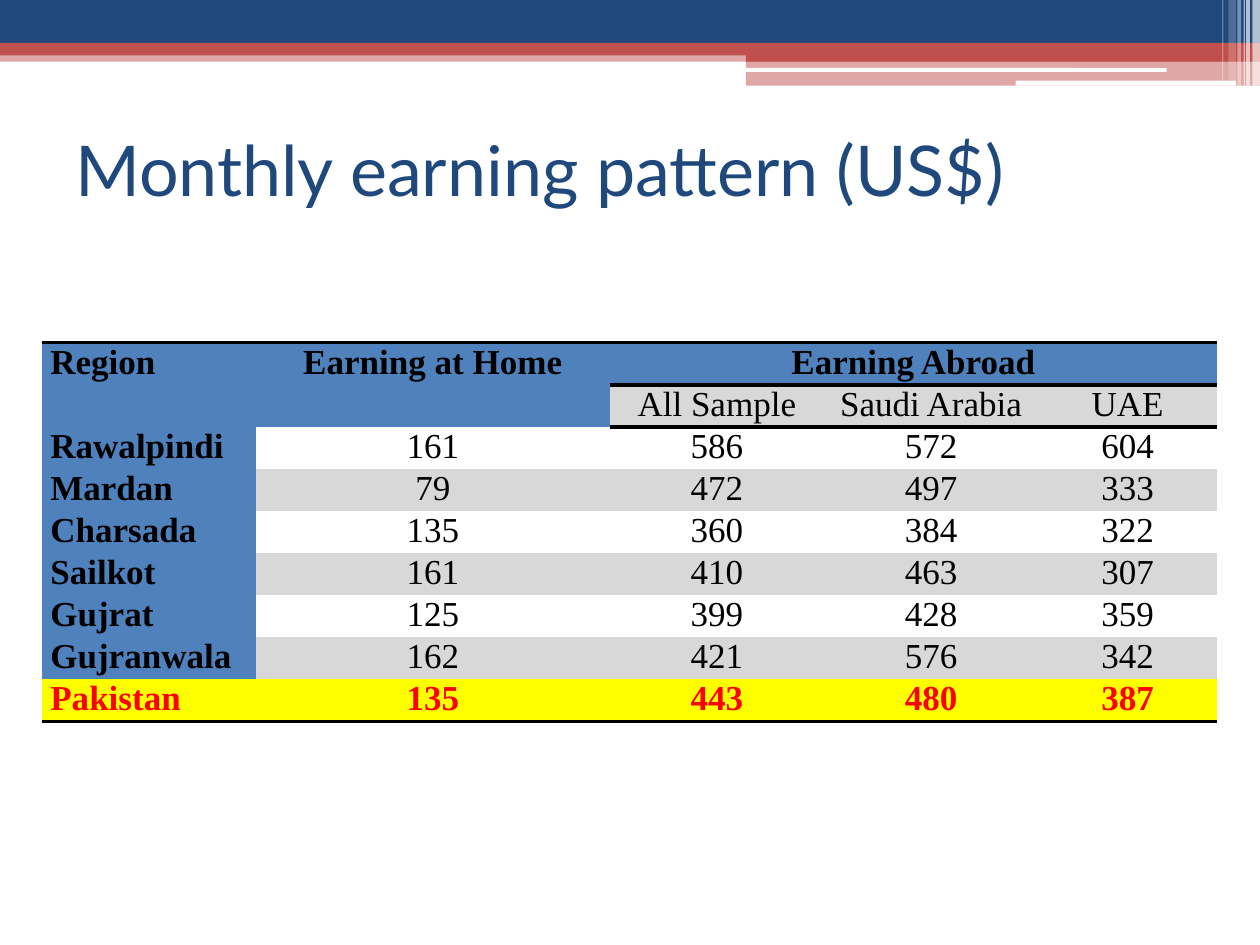
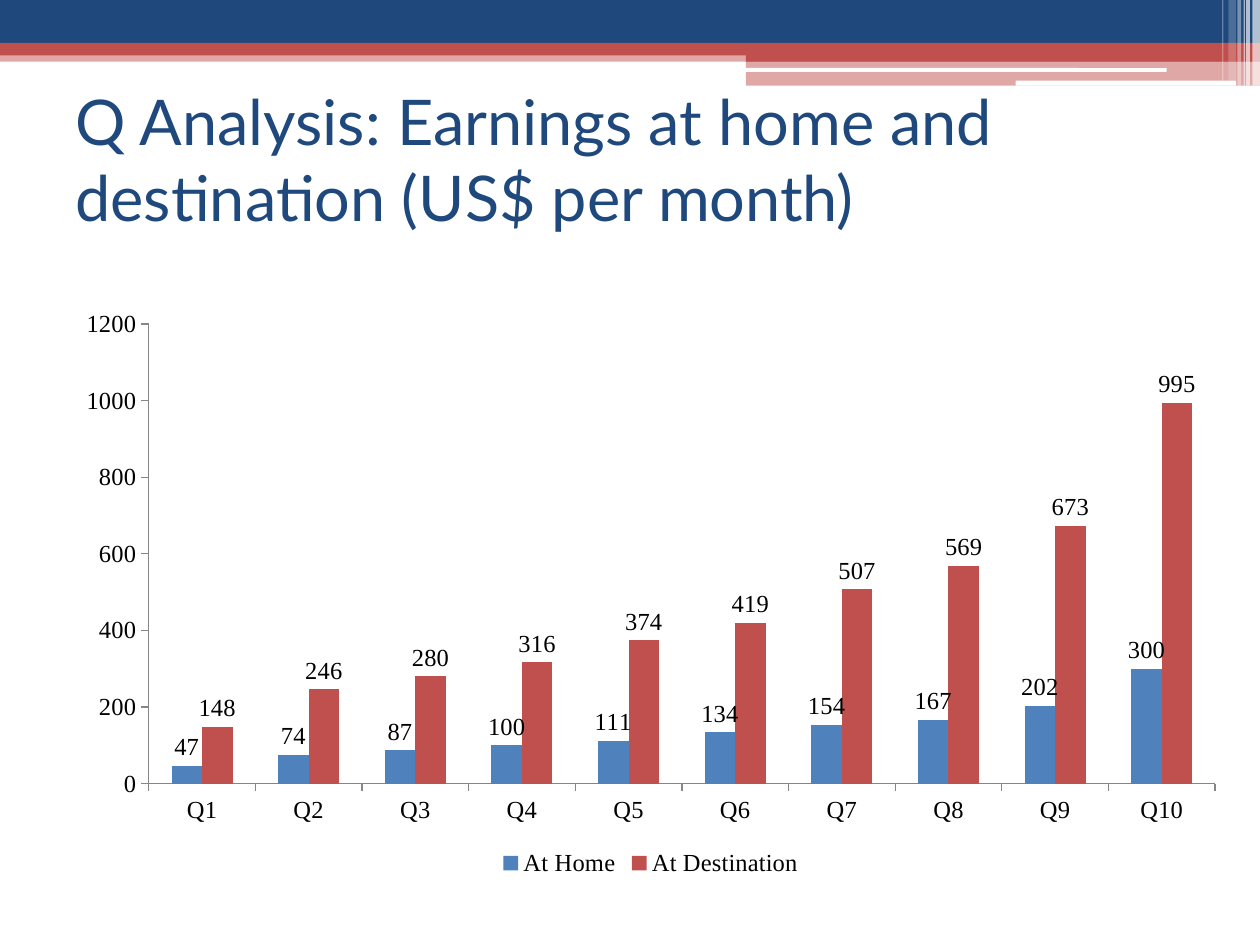
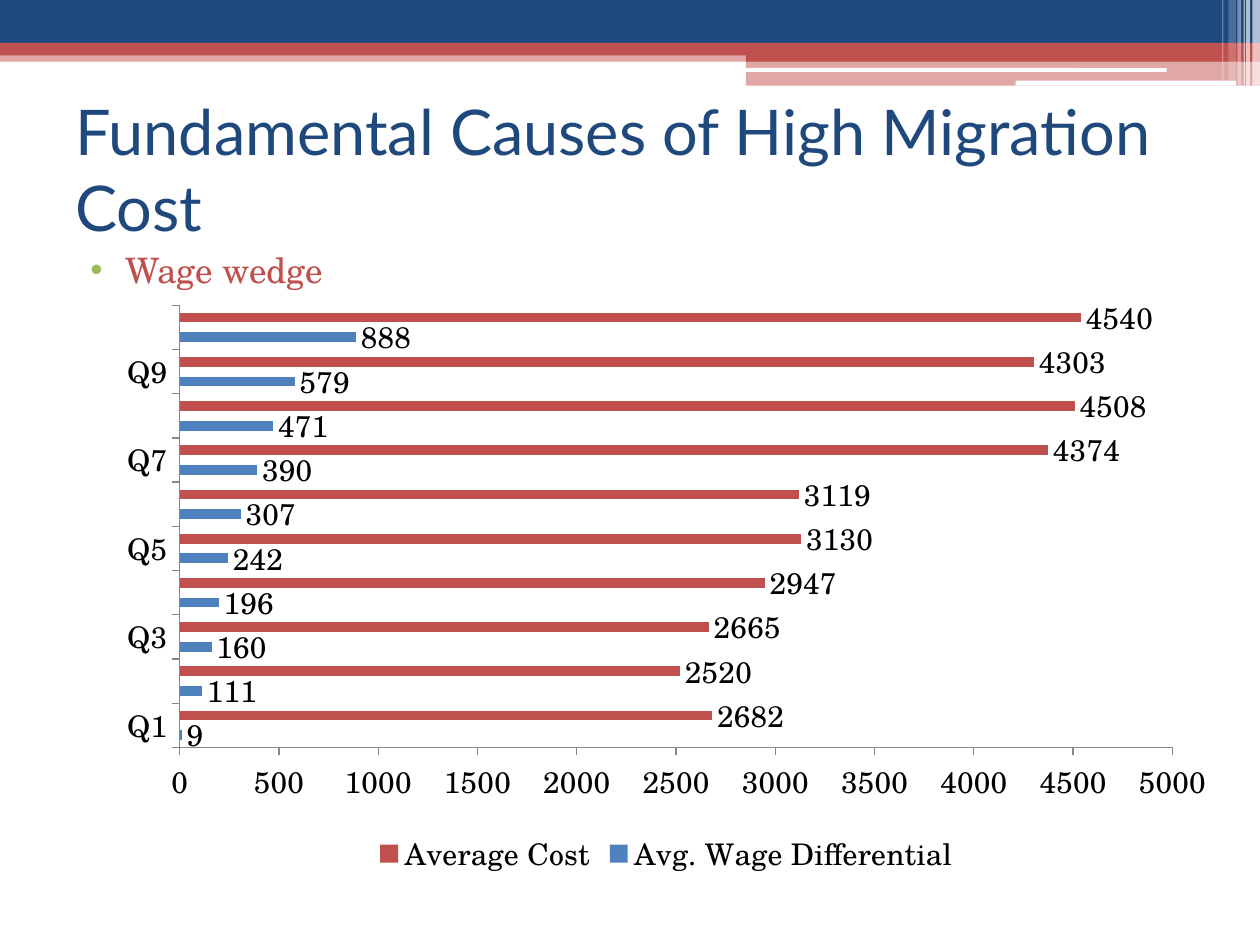
from lxml import etree
from pptx import Presentation
from pptx.chart.data import CategoryChartData
from pptx.dml.color import RGBColor
from pptx.enum.chart import XL_CHART_TYPE as CT, XL_LABEL_POSITION as LP
from pptx.enum.chart import XL_LEGEND_POSITION as LEG, XL_TICK_MARK as TICK
from pptx.enum.shapes import MSO_SHAPE as SHAPE
from pptx.enum.text import MSO_ANCHOR, PP_ALIGN
from pptx.oxml.ns import qn
from pptx.util import Inches, Pt

NAVY = RGBColor(0x1F, 0x49, 0x7D)
RED = RGBColor(0xC0, 0x50, 0x4D)
BLUE = RGBColor(0x4F, 0x81, 0xBD)
GRAY = RGBColor(0xD8, 0xD8, 0xD8)
AXIS_GRAY = RGBColor(0x86, 0x86, 0x86)
YELLOW = RGBColor(0xFF, 0xFF, 0x00)
BRIGHT_RED = RGBColor(0xFF, 0x00, 0x00)
WHITE = RGBColor(0xFF, 0xFF, 0xFF)
BLACK = RGBColor(0x00, 0x00, 0x00)
GREEN = RGBColor(0x9B, 0xBB, 0x59)

TITLE_FONT = "Lato"
BODY_FONT = "TeX Gyre Schola"
DATA_FONT = "Times New Roman"
NO_GRID_STYLE = "{2D5ABB26-0587-4C30-8999-92F81FD0307C}"

BANDS = [
    (0, 0.4, 10, 0.09, RED, 50),
    (0, 0, 10, 0.34, NAVY, 100),
    (0, 0.34, 10, 0.1, RED, 100),
    (5.92, 0.39, 4.08, 0.1, RED, 100),
    (5.92, 0.48, 4.08, 0.2, RED, 50),
]
SLITS = [(5.91, 0.54, 3.35, 0.03), (8.06, 0.64, 1.75, 0.04)]
STRIPES = [
    (9.94, 0.06, 0.68, 65), (9.89, 0.03, 0.68, 65), (9.87, 0.01, 0.68, 60),
    (9.82, 0.03, 0.68, 40), (9.75, 0.06, 0.64, 20), (9.7, 0.01, 0.64, 30),
]

QUINTILES = [f"Q{n}" for n in range(1, 11)]
EARNINGS = [
    ("At Home", BLUE, (47, 74, 87, 100, 111, 134, 154, 167, 202, 300)),
    ("At Destination", RED, (148, 246, 280, 316, 374, 419, 507, 569, 673, 995)),
]
WAGE_WEDGE = [
    ("Avg. Wage Differential", BLUE, (9, 111, 160, 196, 242, 307, 390, 471, 579, 888)),
    ("Average Cost", RED,
     (2682, 2520, 2665, 2947, 3130, 3119, 4374, 4508, 4303, 4540)),
]
COLUMN_WIDTHS = [1.7, 2.81, 1.7, 1.7, 1.42]
EARNING_ROWS = [
    ("Region", "Earning at Home", "Earning Abroad", "", ""),
    ("", "", "All Sample", "Saudi Arabia", "UAE"),
    ("Rawalpindi", "161", "586", "572", "604"),
    ("Mardan", "79", "472", "497", "333"),
    ("Charsada", "135", "360", "384", "322"),
    ("Sailkot", "161", "410", "463", "307"),
    ("Gujrat", "125", "399", "428", "359"),
    ("Gujranwala", "162", "421", "576", "342"),
    ("Pakistan", "135", "443", "480", "387"),
]


def inches(box):
    """Turn a box of plain numbers into lengths."""
    return [Inches(v) for v in box]


def add_run(p, text, font, size, color, bold=False):
    """Add one formatted run to a paragraph."""
    r = p.add_run()
    r.text = text
    r.font.name = font
    r.font.size = Pt(size)
    r.font.bold = bold
    r.font.color.rgb = color


def add_block(s, box, color, alpha=100, kind=SHAPE.RECTANGLE):
    """Draw a borderless block with the given opacity in percent."""
    sp = s.shapes.add_shape(kind, *inches(box))
    sp.shadow.inherit = False
    sp.fill.solid()
    sp.fill.fore_color.rgb = color
    sp.line.fill.background()
    if alpha < 100:
        clr = sp._element.spPr.find(f"{qn('a:solidFill')}/{qn('a:srgbClr')}")
        etree.SubElement(clr, qn("a:alpha"), val=str(alpha * 1000))


def add_header(s, left=0, top=0):
    """Draw the coloured bands, white slits and corner stripes."""
    for x, y, w, h, color, alpha in BANDS:
        add_block(s, (left + x, top + y, w, h), color, alpha)
    for x, y, w, h in SLITS:
        add_block(s, (left + x, top + y, w, h), WHITE, kind=SHAPE.ROUNDED_RECTANGLE)
    for x, w, h, alpha in STRIPES:
        add_block(s, (left + x, top, w, h), WHITE, alpha)


def add_text_box(s, box, anchor):
    """Add a wrapping text box and return its frame."""
    tf = s.shapes.add_textbox(*inches(box)).text_frame
    tf.word_wrap = True
    tf.vertical_anchor = anchor
    return tf


def add_titled_slide(prs, title, size=36, top=0.75):
    """Add a slide with the shared header and a title."""
    s = prs.slides.add_slide(prs.slide_layouts[6])
    add_header(s)
    tf = add_text_box(s, (0.5, top, 9, 1.17), MSO_ANCHOR.MIDDLE)
    add_run(tf.paragraphs[0], title, TITLE_FONT, size, NAVY)
    return s


def add_bullet(s, box, text):
    """Add a text box holding one bulleted line."""
    p = add_text_box(s, box, MSO_ANCHOR.TOP).paragraphs[0]
    p.space_before = Pt(3)
    add_run(p, text, BODY_FONT, 20, RED)
    pPr = p._p.get_or_add_pPr()
    pPr.set("marL", str(Inches(0.4)))
    pPr.set("indent", str(Inches(-0.28)))
    clr = etree.SubElement(pPr, qn("a:buClr"))
    etree.SubElement(clr, qn("a:srgbClr"), val=str(GREEN))
    etree.SubElement(pPr, qn("a:buFont"), typeface="Arial")
    etree.SubElement(pPr, qn("a:buChar"), char="•")


def add_border(cell, side):
    """Put a black rule on one side of a cell."""
    ln = etree.Element(qn(f"a:ln{side}"), w=str(Pt(2.25)))
    fill = etree.SubElement(ln, qn("a:solidFill"))
    etree.SubElement(fill, qn("a:srgbClr"), val=str(BLACK))
    cell._tc.get_or_add_tcPr().insert(0, ln)


def cell_fill(row, col, last):
    """Give the fill colour of a table cell, or None."""
    if row == last:
        return YELLOW
    if row == 0 or col == 0 or (row == 1 and col == 1):
        return BLUE
    return GRAY if row % 2 else None


def add_earnings_table(s, left, top, row_height):
    """Add the table of monthly earnings by region."""
    last = len(EARNING_ROWS) - 1
    box = (left, top, sum(COLUMN_WIDTHS), row_height * (last + 1))
    frame = s.shapes.add_table(last + 1, len(COLUMN_WIDTHS), *inches(box))
    next(frame._element.iter(qn("a:tableStyleId"))).text = NO_GRID_STYLE
    table = frame.table
    table.first_row = table.horz_banding = False
    for column, width in zip(table.columns, COLUMN_WIDTHS):
        column.width = Inches(width)
    for i, row in enumerate(EARNING_ROWS):
        for j, text in enumerate(row):
            cell = table.cell(i, j)
            cell.margin_left = cell.margin_right = Inches(0.07)
            cell.margin_top = cell.margin_bottom = 0
            color = cell_fill(i, j, last)
            if color is None:
                cell.fill.background()
            else:
                cell.fill.solid()
                cell.fill.fore_color.rgb = color
            if i == last or (i == 0 and j >= 2):
                add_border(cell, "B")
            if i == 0 or (i == 1 and j >= 2):
                add_border(cell, "T")
            if text:
                p = cell.text_frame.paragraphs[0]
                p.alignment = PP_ALIGN.CENTER if j else PP_ALIGN.LEFT
                add_run(p, text, DATA_FONT, 20, BRIGHT_RED if i == last else BLACK,
                        i in (0, last) or j == 0)
    for start, end in [((0, 0), (1, 0)), ((0, 1), (1, 1)), ((0, 2), (0, 4))]:
        table.cell(*start).merge(table.cell(*end))


def add_bar_chart(s, box, kind, series, font, size, top_value, step, overlap=0):
    """Add a clustered chart with value labels and a legend below."""
    data = CategoryChartData(number_format="0")
    data.categories = QUINTILES
    for name, _, values in series:
        data.add_series(name, values)
    chart = s.shapes.add_chart(kind, *inches(box), data).chart
    chart.has_title = False
    chart.font.name = font
    chart.font.size = Pt(size)
    chart.font.color.rgb = BLACK
    chart.has_legend = True
    chart.legend.position = LEG.BOTTOM
    chart.legend.include_in_layout = False
    axis = chart.value_axis
    axis.minimum_scale, axis.maximum_scale, axis.major_unit = 0, top_value, step
    axis.has_major_gridlines = True
    axis.major_gridlines.format.line.color.rgb = WHITE
    axis.major_gridlines.format.line.width = Pt(0.75)
    axis.tick_labels.number_format = "0"
    axis.tick_labels.number_format_is_linked = False
    for ax in (axis, chart.category_axis):
        ax.major_tick_mark = TICK.OUTSIDE
        ax.minor_tick_mark = TICK.NONE
        ax.format.line.color.rgb = AXIS_GRAY
        ax.format.line.width = Pt(0.75)
    plot = chart.plots[0]
    plot.vary_by_categories = False
    plot.gap_width = 150
    plot.overlap = overlap
    for ser, (_, color, _) in zip(plot.series, series):
        ser.format.fill.solid()
        ser.format.fill.fore_color.rgb = color
        ser.invert_if_negative = False
        labels = ser.data_labels
        labels.show_value = True
        labels.number_format = "0"
        labels.number_format_is_linked = False
        labels.position = LP.OUTSIDE_END


def main():
    """Build the three slides and save them."""
    prs = Presentation()
    prs.slide_width, prs.slide_height = Inches(10), Inches(7.5)

    s = add_titled_slide(prs, "Monthly earning pattern (US$)", 40)
    add_earnings_table(s, 0.33, 2.72, 0.31)

    s = add_titled_slide(
        prs, "Q Analysis: Earnings at home and destination (US$ per month)", top=0.67)
    add_bar_chart(s, (0.5, 2.37, 9.33, 4.63), CT.COLUMN_CLUSTERED, EARNINGS,
                  DATA_FONT, 14, 1200, 200)

    s = add_titled_slide(prs, "Fundamental Causes of High Migration Cost")
    add_bullet(s, (0.5, 1.92, 9, 5.27), "Wage wedge")
    add_bar_chart(s, (0.83, 2.33, 8.92, 4.67), CT.BAR_CLUSTERED, WAGE_WEDGE,
                  BODY_FONT, 17, 5000, 500, -100)

    prs.save("out.pptx")


if __name__ == "__main__":
    main()
